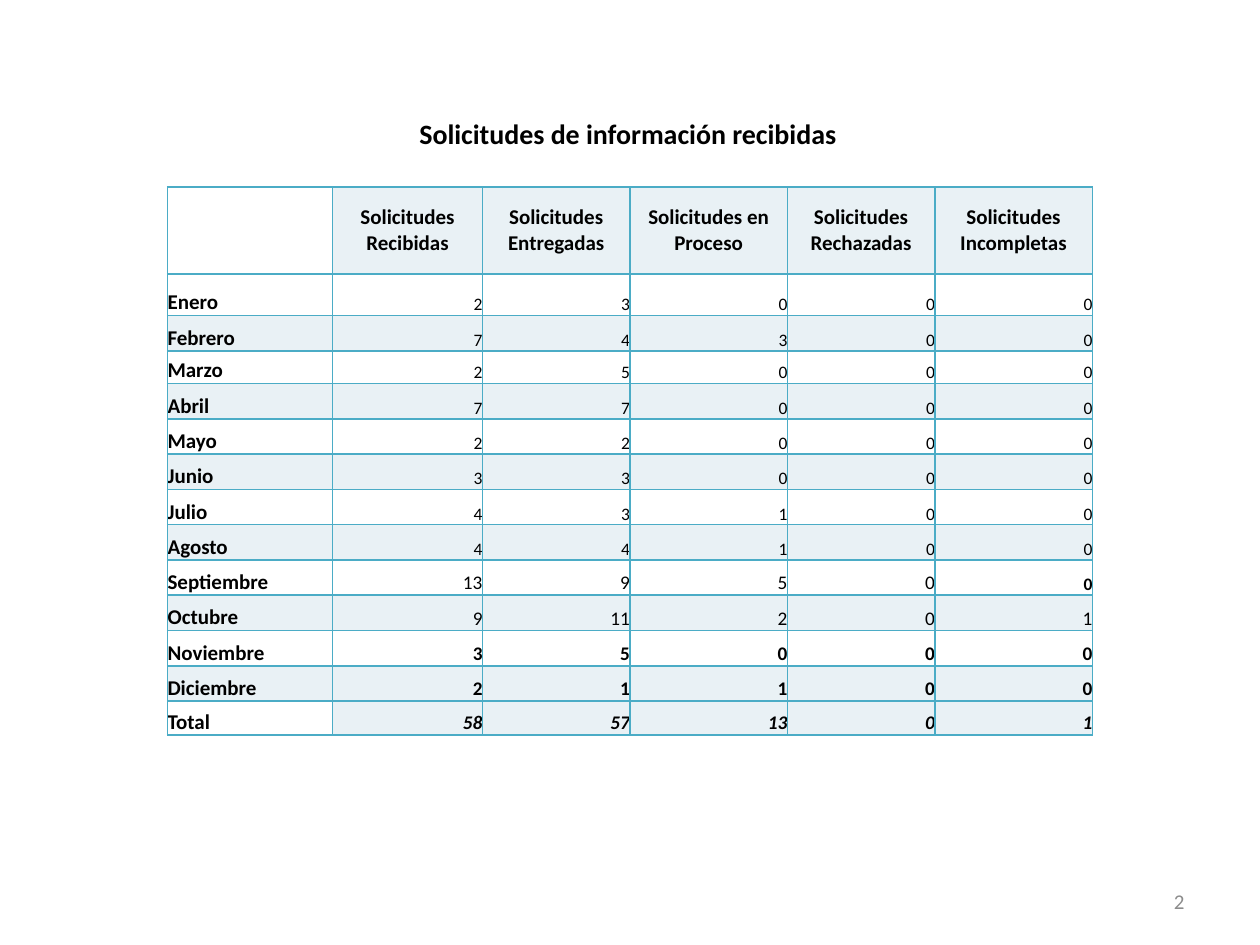
"""Build the slide with the monthly table of information requests."""
import dataclasses
import typing

import lxml.etree
import pptx
import pptx.dml.color
import pptx.enum.text
import pptx.oxml.ns
import pptx.util

Align = pptx.enum.text.PP_ALIGN
Anchor = pptx.enum.text.MSO_ANCHOR


@dataclasses.dataclass(frozen=True)
class Theme:
    font: str = "Calibri"
    ink: str = "000000"
    muted: str = "8C8C8C"
    plain: str = "FFFFFF"
    band: str = "E9F1F5"
    border: str = "4BACC6"
    border_width: float = 1
    title_size: int = 16
    label_size: int = 12
    emphasis_size: int = 11
    figure_size: int = 10


class Box(typing.NamedTuple):
    left: float
    top: float
    width: float
    height: float


class TextStyle(typing.NamedTuple):
    size: int
    bold: bool = False
    italic: bool = False
    color: str = Theme.ink
    alignment: Align = Align.RIGHT


class Month(typing.NamedTuple):
    name: str
    counts: tuple
    style: TextStyle
    height: float = 0.28


THEME = Theme()
SLIDE_WIDTH, SLIDE_HEIGHT = 10, 7.5
TITLE_BOX = Box(0.047, 0.083, 0.903, 0.116)
NUMBER_BOX = Box(0.717, 0.927, 0.233, 0.053)
TABLE_BOX = Box(0.133, 0.198, 0.734, 0.585)
COLUMN_WIDTHS = (1.31, 1.19, 1.17, 1.25, 1.17, 1.25)
HEADER_HEIGHT = 0.69

TITLE = TextStyle(THEME.title_size, bold=True, alignment=Align.CENTER)
HEADER = TextStyle(THEME.label_size, bold=True, alignment=Align.CENTER)
LABEL = TextStyle(THEME.label_size, bold=True, alignment=Align.LEFT)
NUMBER = TextStyle(THEME.label_size, color=THEME.muted)
SMALL = TextStyle(THEME.figure_size)
SMALL_BOLD = TextStyle(THEME.figure_size, bold=True)
MEDIUM = TextStyle(THEME.emphasis_size)
STRONG = TextStyle(THEME.emphasis_size, bold=True)
SUM = TextStyle(THEME.emphasis_size, bold=True, italic=True)

HEADERS = (
    "Solicitudes Recibidas",
    "Solicitudes Entregadas",
    "Solicitudes en Proceso",
    "Solicitudes Rechazadas",
    "Solicitudes Incompletas",
)
MONTHS = (
    Month("Enero", (2, 3, 0, 0, 0), SMALL, 0.33),
    Month("Febrero", (7, 4, 3, 0, 0), SMALL),
    Month("Marzo", (2, 5, 0, 0, 0), SMALL, 0.26),
    Month("Abril", (7, 7, 0, 0, 0), SMALL),
    Month("Mayo", (2, 2, 0, 0, 0), SMALL),
    Month("Junio", (3, 3, 0, 0, 0), SMALL),
    Month("Julio", (4, 3, 1, 0, 0), SMALL),
    Month("Agosto", (4, 4, 1, 0, 0), SMALL),
    Month("Septiembre", (13, 9, 5, 0, 0), MEDIUM),
    Month("Octubre", (9, 11, 2, 0, 1), MEDIUM),
    Month("Noviembre", (3, 5, 0, 0, 0), STRONG),
    Month("Diciembre", (2, 1, 1, 0, 0), STRONG),
    Month("Total", (58, 57, 13, 0, 1), SUM, 0.27),
)
STYLE_EXCEPTIONS = {("Septiembre", 5): SMALL_BOLD}


def place(box: Box) -> tuple:
    """Turn shares of the slide into lengths."""
    return tuple(
        pptx.util.Inches(share * extent)
        for share, extent in zip(box, (SLIDE_WIDTH, SLIDE_HEIGHT) * 2)
    )


def write(text_frame, text: str, style: TextStyle) -> None:
    """Set one paragraph of text and format its run."""
    text_frame.text = text
    paragraph = text_frame.paragraphs[0]
    paragraph.alignment = style.alignment
    for run in paragraph.runs:
        run.font.name = THEME.font
        run.font.size = pptx.util.Pt(style.size)
        run.font.bold = style.bold
        run.font.italic = style.italic
        run.font.color.rgb = pptx.dml.color.RGBColor.from_string(style.color)


def paint_cell(cell, color: str) -> None:
    """Give a cell its four borders and its fill."""
    properties = cell._tc.get_or_add_tcPr()
    name = pptx.oxml.ns.qn
    for side in ("a:lnL", "a:lnR", "a:lnT", "a:lnB"):
        line = lxml.etree.SubElement(
            properties, name(side), w=str(pptx.util.Pt(THEME.border_width))
        )
        fill = lxml.etree.SubElement(line, name("a:solidFill"))
        lxml.etree.SubElement(fill, name("a:srgbClr"), val=THEME.border)
    cell.fill.solid()
    cell.fill.fore_color.rgb = pptx.dml.color.RGBColor.from_string(color)


def fill_cell(cell, text: str, style: TextStyle, anchor: Anchor) -> None:
    """Write text in a cell without inner margins."""
    cell.margin_left = cell.margin_right = cell.margin_top = cell.margin_bottom = 0
    cell.vertical_anchor = anchor
    write(cell.text_frame, text, style)


def add_requests_table(slide) -> None:
    """Add the table with one row per month and a total."""
    table = slide.shapes.add_table(
        len(MONTHS) + 1, len(COLUMN_WIDTHS), *place(TABLE_BOX)
    ).table
    table.first_row = table.horz_banding = False
    for column, width in zip(table.columns, COLUMN_WIDTHS):
        column.width = pptx.util.Inches(width)
    heights = (HEADER_HEIGHT, *(month.height for month in MONTHS))
    for row, height in zip(table.rows, heights):
        row.height = pptx.util.Inches(height)

    paint_cell(table.cell(0, 0), THEME.plain)
    for column, header in enumerate(HEADERS, 1):
        paint_cell(table.cell(0, column), THEME.band)
        fill_cell(table.cell(0, column), header, HEADER, Anchor.MIDDLE)

    for row, month in enumerate(MONTHS, 1):
        banded = row % 2 == 0
        for column, value in enumerate((month.name, *month.counts)):
            cell = table.cell(row, column)
            is_sum = column > 0 and month.style is SUM
            paint_cell(cell, THEME.band if banded or is_sum else THEME.plain)
            style = month.style if column else LABEL
            style = STYLE_EXCEPTIONS.get((month.name, column), style)
            fill_cell(cell, str(value), style, Anchor.BOTTOM)


def main() -> None:
    """Build and save the presentation."""
    presentation = pptx.Presentation()
    presentation.slide_width = pptx.util.Inches(SLIDE_WIDTH)
    presentation.slide_height = pptx.util.Inches(SLIDE_HEIGHT)
    slide = presentation.slides.add_slide(presentation.slide_layouts[5])

    title = slide.shapes.title
    title.left, title.top, title.width, title.height = place(TITLE_BOX)
    title.text_frame.vertical_anchor = Anchor.MIDDLE
    write(title.text_frame, "Solicitudes de información recibidas", TITLE)

    number = slide.shapes.add_textbox(*place(NUMBER_BOX)).text_frame
    number.word_wrap = True
    number.vertical_anchor = Anchor.MIDDLE
    write(number, "2", NUMBER)

    add_requests_table(slide)
    presentation.save("out.pptx")


if __name__ == "__main__":
    main()
